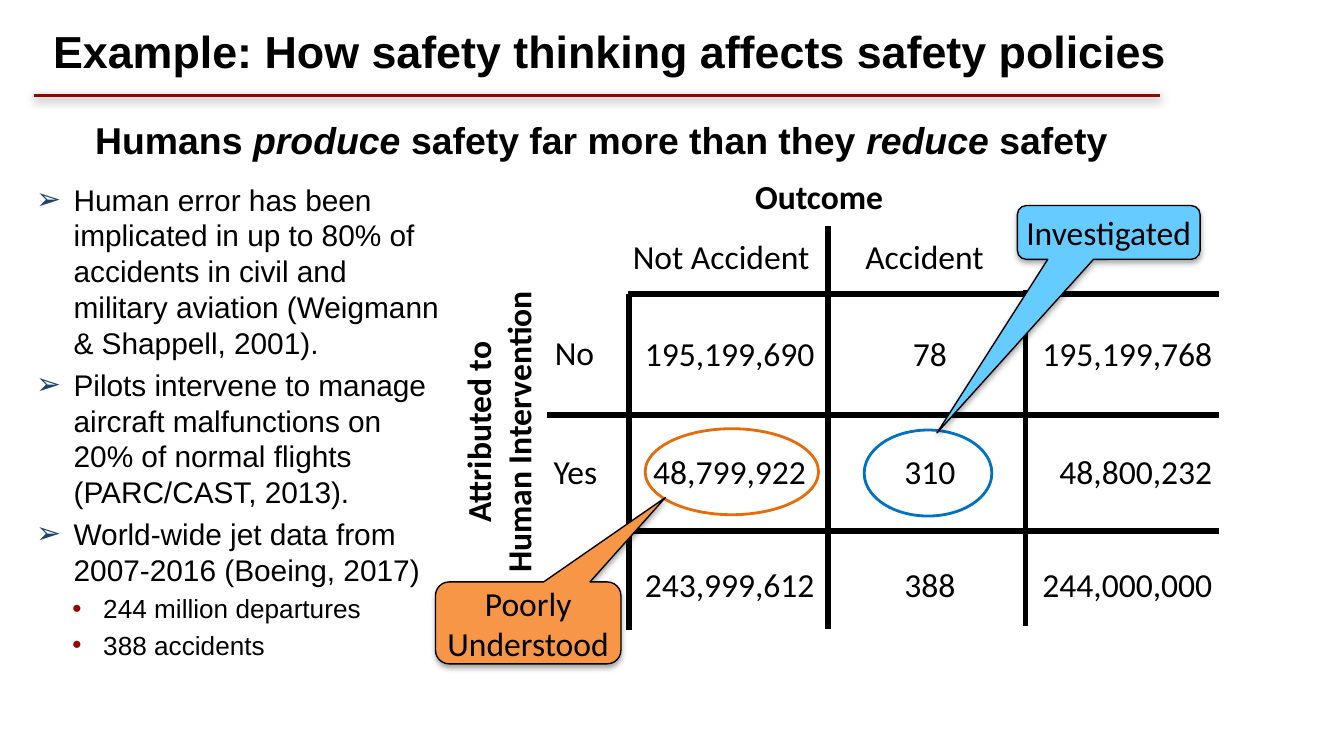
from lxml import etree
from pptx import Presentation
from pptx.dml.color import RGBColor
from pptx.enum.shapes import MSO_CONNECTOR, MSO_SHAPE
from pptx.enum.text import MSO_ANCHOR, PP_ALIGN
from pptx.oxml import parse_xml
from pptx.oxml.ns import nsdecls, qn
from pptx.util import Inches, Pt

LINE = MSO_CONNECTOR.STRAIGHT
OVAL = MSO_SHAPE.OVAL
CALLOUT = MSO_SHAPE.ROUNDED_RECTANGULAR_CALLOUT
MIDDLE = MSO_ANCHOR.MIDDLE
LEFT, CENTER, RIGHT = PP_ALIGN.LEFT, PP_ALIGN.CENTER, PP_ALIGN.RIGHT

BLACK = RGBColor(0x00, 0x00, 0x00)
RED = RGBColor(0x99, 0x00, 0x00)
NAVY = RGBColor(0x1B, 0x41, 0x6C)
ORANGE = RGBColor(0xF7, 0x96, 0x46)
RUST = RGBColor(0xE4, 0x6C, 0x0A)
SKY = RGBColor(0x66, 0xCC, 0xFF)
BLUE = RGBColor(0x00, 0x70, 0xC0)

POINTS = [
    (0, "Human error has been implicated in up to 80% of accidents in civil "
        "and military aviation (Weigmann & Shappell, 2001)."),
    (0, "Pilots intervene to manage aircraft malfunctions on 20% of normal "
        "flights (PARC/CAST, 2013)."),
    (0, "World-wide jet data from 2007-2016 (Boeing, 2017)"),
    (1, "244 million departures"),
    (1, "388 accidents"),
]
# Per level: size, bullet, bullet colour, indent, hang
LEVELS = [(16, "➢", NAVY, 0.28, 0.28), (14, "•", RED, 0.5, 0.23)]
COUNTS = [
    ("195,199,690", "78", "195,199,768"),
    ("48,799,922", "310", "48,800,232"),
    ("243,999,612", "388", "244,000,000"),
]


def add_run(para, text, size, face, bold=False, italic=False):
    run = para.add_run()
    run.text = text
    font = run.font
    font.name, font.size = face, Pt(size)
    font.bold, font.italic = bold, italic
    font.color.rgb = BLACK


def add_box(slide, x, y, w, h, wrap=True):
    box = slide.shapes.add_textbox(Inches(x), Inches(y), Inches(w), Inches(h))
    box.text_frame.word_wrap = wrap
    return box


def add_label(slide, x, y, w, lines, h=0.4, bold=False, align=LEFT):
    box = add_box(slide, x, y, w, h, wrap=False)
    frame = box.text_frame
    for i, line in enumerate(lines):
        para = frame.add_paragraph() if i else frame.paragraphs[0]
        para.alignment = align
        add_run(para, line, 18, "Calibri", bold)
    return box


def add_shadow(shape, alpha, blur, dist):
    """Give a soft black shadow straight below; no blur means no shadow."""
    props = shape._element.spPr
    for old in props.findall(qn("a:effectLst")):
        props.remove(old)
    effects = etree.SubElement(props, qn("a:effectLst"))
    if blur:
        effects.append(parse_xml(
            f'<a:outerShdw {nsdecls("a")} blurRad="{Pt(blur)}" '
            f'dist="{Pt(dist)}" dir="5400000" rotWithShape="0">'
            f'<a:srgbClr val="000000"><a:alpha val="{alpha * 1000}"/>'
            '</a:srgbClr></a:outerShdw>'))


def add_line(slide, x1, y1, x2, y2, color=BLACK, width=3, shadow=(0, 0, 0)):
    line = slide.shapes.add_connector(
        LINE, Inches(x1), Inches(y1), Inches(x2), Inches(y2))
    line.line.color.rgb, line.line.width = color, Pt(width)
    add_shadow(line, *shadow)


def add_ring(slide, x, y, w, h, color):
    ring = slide.shapes.add_shape(
        OVAL, Inches(x), Inches(y), Inches(w), Inches(h))
    ring.shadow.inherit = False
    ring.fill.background()
    ring.line.color.rgb, ring.line.width = color, Pt(1.5)


def add_callout(slide, x, y, w, h, text, color, tip):
    shape = slide.shapes.add_shape(
        CALLOUT, Inches(x), Inches(y), Inches(w), Inches(h))
    shape.adjustments[0], shape.adjustments[1] = tip
    shape.fill.solid()
    shape.fill.fore_color.rgb = color
    shape.line.color.rgb, shape.line.width = BLACK, Pt(0.75)
    add_shadow(shape, 35, 3.1, 1.8)
    frame = shape.text_frame
    frame.word_wrap, frame.vertical_anchor = True, MIDDLE
    frame.margin_left = frame.margin_right = 0
    frame.margin_top = frame.margin_bottom = 0
    para = frame.paragraphs[0]
    para.alignment = CENTER
    add_run(para, text, 18, "Calibri")


def add_head(slide, x, y, w):
    add_line(slide, x, y + 0.59, x + 8.38, y + 0.59, RED, 2, (38, 5, 1.6))
    title = add_box(slide, x, y + 0.02, w, 0.47).text_frame
    title.vertical_anchor = MIDDLE
    title.paragraphs[0].alignment = CENTER
    add_run(title.paragraphs[0],
            "Example: How safety thinking affects safety policies",
            24, "Arial", True)
    claim = add_box(slide, x + 0.36, y + 0.7, 7.77, 0.44).text_frame
    for text, italic in [("Humans ", False), ("produce ", True),
                         ("safety far more than they ", False),
                         ("reduce ", True), ("safety", False)]:
        add_run(claim.paragraphs[0], text, 20, "Arial", True, italic)


def add_points(slide, x, y, w, h):
    frame = add_box(slide, x, y, w, h).text_frame
    for i, (level, text) in enumerate(POINTS):
        size, mark, color, indent, hang = LEVELS[level]
        para = frame.add_paragraph() if i else frame.paragraphs[0]
        para.level = level
        props = para._p.get_or_add_pPr()
        props.set("marL", str(Inches(indent)))
        props.set("indent", str(-Inches(hang)))
        tint = etree.SubElement(props, qn("a:buClr"))
        etree.SubElement(tint, qn("a:srgbClr"), val=str(color))
        etree.SubElement(props, qn("a:buFont"), typeface="Arial")
        etree.SubElement(props, qn("a:buChar"), char=mark)
        if i:
            para.space_before = Pt(size * 0.2)
        add_run(para, text, size, "Arial")


def count_width(text):
    """Box width that fits a number: digits, commas and side margins."""
    commas = text.count(",")
    return 0.21 + 0.13 * (len(text) - commas) + 0.06 * commas


def add_matrix(slide, x, y, w):
    """Draw the outcome grid; x, y is the top left of its number cells."""
    end = x + w
    for left, drop in [(x - 0.6, 0.9), (x, 1.76), (x, 0)]:
        add_line(slide, left, y + drop, end, y + drop)
    for step, top, foot in [(0.01, 0, 2.5), (1.49, -0.51, 2.49),
                            (2.96, -0.03, 2.47)]:
        add_line(slide, x + step, y + top, x + step, y + foot)

    add_label(slide, x + 0.85, y - 0.93, 1.3, ["Outcome"], bold=True)
    add_label(slide, x - 0.06, y - 0.48, 1.62, ["Not Accident"])
    add_label(slide, x + 1.67, y - 0.48, 1.17, ["Accident"])
    side = add_label(slide, x - 2.12, y + 0.67, 2.32,
                     ["Attributed to", "Human Intervention"], 0.71, True,
                     CENTER)
    side.rotation = 270
    add_label(slide, x - 0.64, y + 0.23, 0.52, ["No"])
    add_label(slide, x - 0.65, y + 1.12, 0.61, ["Yes"])

    for row, drop in zip(COUNTS, (0.24, 1.12, 1.96)):
        for col, text in enumerate(row):
            wide = count_width(text)
            if col == 2:
                add_label(slide, end + 0.05 - wide, y + drop, wide, [text],
                          align=RIGHT)
            else:
                mid = x + (0.76, 2.25)[col]
                add_label(slide, mid - wide / 2, y + drop, wide, [text],
                          align=CENTER)

    add_ring(slide, x + 0.13, y + 1, 1.29, 0.64, RUST)
    add_ring(slide, x + 1.76, y + 1.01, 0.95, 0.64, BLUE)
    add_callout(slide, x - 1.43, y + 2.14, 1.38, 0.61, "Poorly Understood",
                ORANGE, (0.74, -1.53))
    add_callout(slide, x + 2.9, y - 0.66, 1.36, 0.4, "Investigated",
                SKY, (-0.94, 3.73))


def main():
    deck = Presentation()
    deck.slide_width = Inches(10)
    deck.slide_height = deck.slide_width * 9 // 16
    slide = deck.slides.add_slide(deck.slide_layouts[6])
    add_head(slide, 0.25, 0.12, 8.57)
    add_points(slide, 0.17, 1.3, 3.23, 3.9)
    add_matrix(slide, 4.67, 2.19, 4.4)
    deck.save("out.pptx")


if __name__ == "__main__":
    main()
